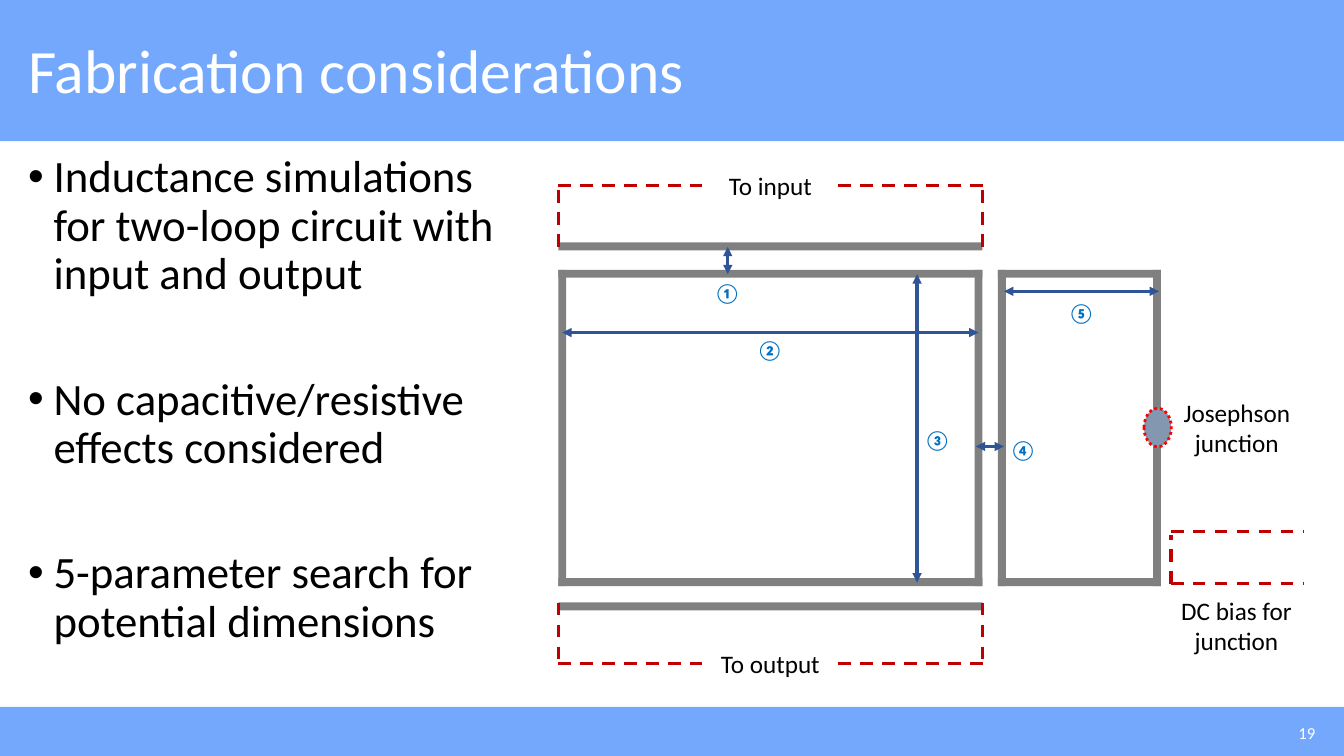
from lxml.etree import SubElement
from pptx import Presentation
from pptx.dml.color import RGBColor
from pptx.enum.dml import MSO_LINE_DASH_STYLE as Dash
from pptx.enum.shapes import MSO_CONNECTOR as Connector, MSO_SHAPE as Shape
from pptx.enum.text import MSO_ANCHOR as Anchor, PP_ALIGN as Align
from pptx.oxml.ns import qn
from pptx.util import Cm, Pt

BAND_BLUE = RGBColor(0x74, 0xA8, 0xFC)
WHITE = RGBColor(0xFF, 0xFF, 0xFF)
BLACK = RGBColor(0, 0, 0)
WIRE_GREY = RGBColor(0x80, 0x80, 0x80)
LEAD_RED = RGBColor(0xC0, 0, 0)
JUNCTION_FILL = RGBColor(0x84, 0x97, 0xB0)
JUNCTION_RED = RGBColor(0xFF, 0, 0)
ARROW_BLUE = RGBColor(0x2F, 0x55, 0x97)
NUMBER_BLUE = RGBColor(0, 0x70, 0xC0)

SLIDE_WIDTH, SLIDE_HEIGHT = 33.87, 19.05
WIRE = 0.2
LOOP_WIDTH, LOOP_HEIGHT, LOOP_TOP = 10.69, 7.97, 2.13
SIDE_LEFT, SIDE_WIDTH = 11.08, 4.11
LEAD_LENGTH = 3.63
BULLETS = [
    "Inductance simulations for two-loop circuit with input and output",
    "No capacitive/resistive effects considered",
    "5-parameter search for potential dimensions",
]
PORTS = [("To input", 0, 1.55, 1.44), ("To output", 12.04, 10.52, 10.51)]
DIMENSIONS = [
    ("①", (4.27, 1.55, 4.27, 2.24), (3.68, 2.29)),
    ("②", (10.59, 3.71, 0.1, 3.71), (4.75, 3.71)),
    ("③", (9.04, 2.24, 9.04, 10.01), (8.97, 6.0)),
    ("④", (11.23, 6.58, 10.52, 6.58), (11.13, 6.23)),
    ("⑤", (15.14, 2.67, 11.23, 2.67), (12.6, 2.8)),
]


def add_filled(slide, kind, left, top, width, height, color):
    """Add a flat preset shape without an outline."""
    shape = slide.shapes.add_shape(kind, Cm(left), Cm(top), Cm(width), Cm(height))
    shape.shadow.inherit = False
    shape.fill.solid()
    shape.fill.fore_color.rgb = color
    shape.line.fill.background()
    return shape


def add_line(slide, left, top, start_x, start_y, end_x, end_y, color):
    """Add a straight line whose ends are relative to left and top."""
    line = slide.shapes.add_connector(
        Connector.STRAIGHT, Cm(left + start_x), Cm(top + start_y),
        Cm(left + end_x), Cm(top + end_y))
    line.line.color.rgb = color
    line.line.width = Pt(2.25)
    SubElement(line._element.spPr, qn("a:effectLst"))
    return line


def add_text(slide, left, top, width, height, texts, size, color,
             align=Align.CENTER, anchor=Anchor.TOP, wrap=True, bold=False):
    """Add a text box with one paragraph per text and return its paragraphs."""
    box = slide.shapes.add_textbox(Cm(left), Cm(top), Cm(width), Cm(height))
    frame = box.text_frame
    frame.word_wrap = wrap
    frame.vertical_anchor = anchor
    for index, text in enumerate(texts):
        paragraph = frame.add_paragraph() if index else frame.paragraphs[0]
        paragraph.alignment = align
        run = paragraph.add_run()
        run.text = text
        run.font.name = "Calibri"
        run.font.size = Pt(size)
        run.font.bold = bold
        run.font.color.rgb = color
    return frame.paragraphs


def add_header(slide, left, top, width, height):
    """Place the title band and its title."""
    add_filled(slide, Shape.RECTANGLE, left, top, width, height, BAND_BLUE)
    title = add_text(slide, left + 0.46, top + 0.41, width - 0.92, 2.87,
                     ["Fabrication considerations"], 44, WHITE,
                     Align.LEFT, Anchor.MIDDLE)
    title[0].line_spacing = 0.9


def add_footer(slide, left, top, width, height):
    """Place the bottom band and the slide number."""
    add_filled(slide, Shape.RECTANGLE, left, top, width, height, BAND_BLUE)
    add_text(slide, left + width - 8.09, top + 0.23, 7.62, 0.84, ["19"],
             12, WHITE, Align.RIGHT, Anchor.MIDDLE)


def add_bullets(slide, left, top, width, height):
    """Place the widely spaced bullet list."""
    paragraphs = add_text(slide, left, top, width, height, BULLETS, 32, BLACK, Align.LEFT)
    for index, paragraph in enumerate(paragraphs):
        paragraph.line_spacing = 0.9
        paragraph.space_before = Pt(55 if index else 10)
        properties = paragraph._p.get_or_add_pPr()
        properties.set("marL", str(Cm(0.64)))
        properties.set("indent", str(-Cm(0.64)))
        SubElement(properties, qn("a:buFont")).set("typeface", "Arial")
        SubElement(properties, qn("a:buChar")).set("char", "•")


def add_loop(slide, left, top, width, height):
    """Draw a closed rectangular wire loop from four bars."""
    for x in (left, left + width - WIRE):
        add_filled(slide, Shape.RECTANGLE, x, top, WIRE, height, WIRE_GREY)
    for y in (top, top + height - WIRE):
        add_filled(slide, Shape.RECTANGLE, left, y, width, WIRE, WIRE_GREY)


def add_port(slide, left, top, label, lead_y, wire_y, bar_y):
    """Draw a coupling bar with its dashed leads and label."""
    add_filled(slide, Shape.RECTANGLE, left, top + bar_y, LOOP_WIDTH, WIRE, WIRE_GREY)
    for outer, inner in ((0, LEAD_LENGTH), (LOOP_WIDTH, LOOP_WIDTH - LEAD_LENGTH)):
        for ends in ((outer, wire_y, outer, lead_y), (outer, lead_y, inner, lead_y)):
            add_line(slide, left, top, *ends, LEAD_RED).line.dash_style = Dash.DASH
    add_text(slide, left + LOOP_WIDTH / 2 - 1.5, top + lead_y - 0.5, 3, 1,
             [label], 18, BLACK, wrap=False)


def add_junction(slide, left, top):
    """Draw the Josephson junction, its bias leads and both labels."""
    junction = add_filled(slide, Shape.OVAL, left + 14.76, top + 5.62, 0.69, 0.97,
                          JUNCTION_FILL)
    junction.line.color.rgb = JUNCTION_RED
    junction.line.width = Pt(2)
    junction.line.dash_style = Dash.ROUND_DOT
    add_text(slide, left + 15.27, top + 5.21, 3.66, 1.8, ["Josephson junction"], 18, BLACK)
    for ends in ((15.44, 8.72, 18.77, 8.72), (15.44, 10.04, 15.44, 8.8),
                 (15.44, 10.04, 18.77, 10.04)):
        add_line(slide, left, top, *ends, LEAD_RED).line.dash_style = Dash.DASH
    add_text(slide, left + 14.84, top + 10.21, 4.5, 1.8, ["DC bias for junction"], 18, BLACK)


def add_dimension(slide, left, top, number, ends, label):
    """Draw a double-headed arrow and its circled number."""
    arrow = add_line(slide, left, top, *ends, ARROW_BLUE)
    outline = arrow.line._get_or_add_ln()
    for tag in ("a:headEnd", "a:tailEnd"):
        SubElement(outline, qn(tag)).set("type", "triangle")
    add_text(slide, left + label[0], top + label[1], 1.17, 0.86, [number],
             14, NUMBER_BLUE, wrap=False, bold=True)


def add_circuit(slide, left, top):
    """Assemble the two-loop circuit diagram."""
    add_loop(slide, left, top + LOOP_TOP, LOOP_WIDTH, LOOP_HEIGHT)
    add_loop(slide, left + SIDE_LEFT, top + LOOP_TOP, SIDE_WIDTH, LOOP_HEIGHT)
    for port in PORTS:
        add_port(slide, left, top, *port)
    add_junction(slide, left, top)
    for dimension in DIMENSIONS:
        add_dimension(slide, left, top, *dimension)


def main():
    """Build the slide and save the presentation."""
    presentation = Presentation()
    presentation.slide_width = Cm(SLIDE_WIDTH)
    presentation.slide_height = Cm(SLIDE_HEIGHT)
    slide = presentation.slides.add_slide(presentation.slide_layouts[6])
    add_footer(slide, 0, 17.81, SLIDE_WIDTH, 1.24)
    add_header(slide, 0, 0, SLIDE_WIDTH, 3.56)
    add_bullets(slide, 0.46, 3.76, 13.21, 13.84)
    add_circuit(slide, 14.07, 4.67)
    presentation.save("out.pptx")


if __name__ == "__main__":
    main()
